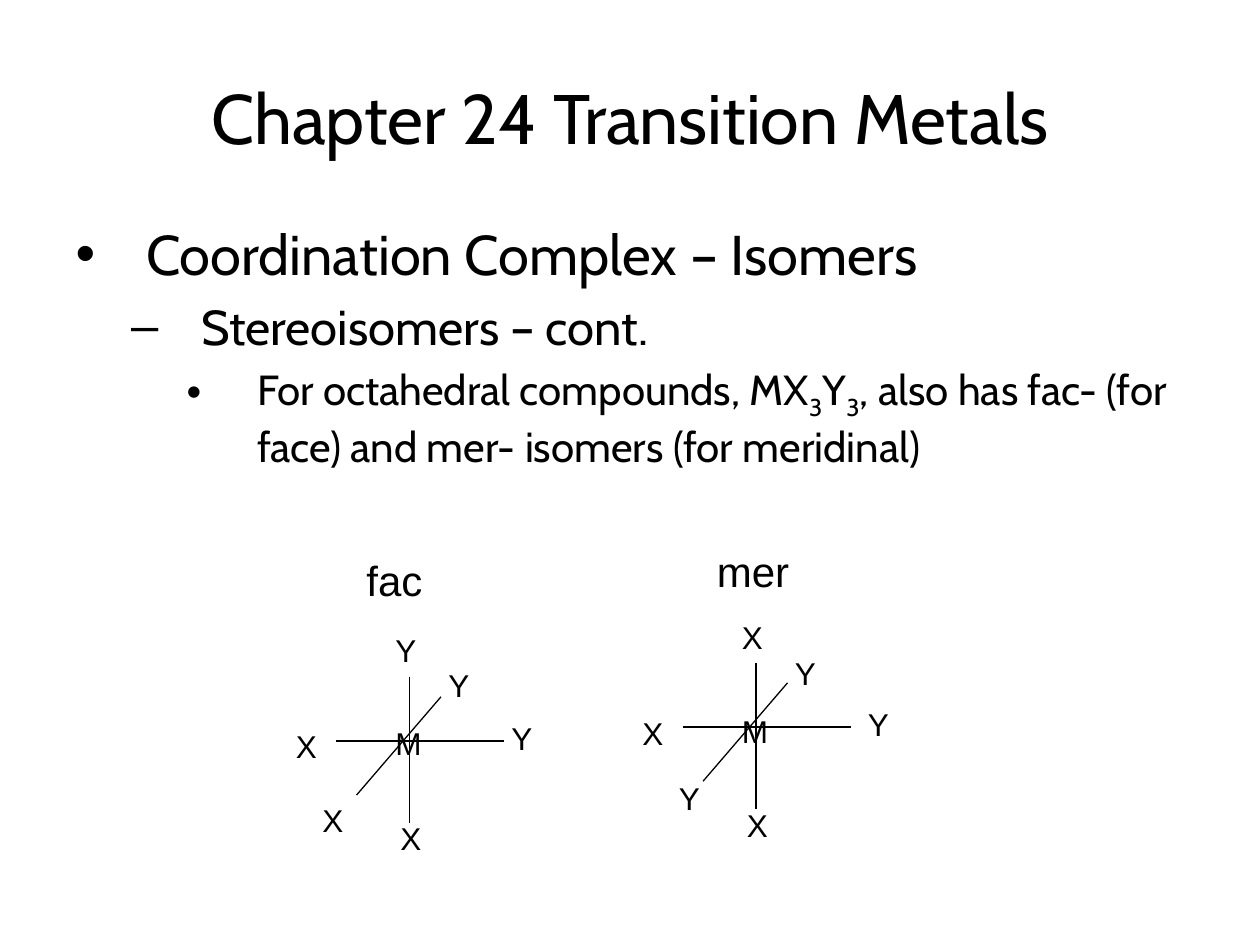
"""Builds a slide on the fac and mer isomers of octahedral complexes."""
from pptx import Presentation
from pptx.dml.color import RGBColor
from pptx.enum.shapes import MSO_CONNECTOR
from pptx.enum.text import MSO_ANCHOR, MSO_AUTO_SIZE, PP_ALIGN
from pptx.oxml.ns import qn
from pptx.util import Pt
from lxml.etree import SubElement

PX = 9144
BLACK = RGBColor(0, 0, 0)


def add_label(s, text, x, y, w, h, size):
    tf = s.shapes.add_textbox(x * PX, y * PX, w * PX, h * PX).text_frame
    tf.word_wrap = True
    tf.auto_size = MSO_AUTO_SIZE.SHAPE_TO_FIT_TEXT
    p = tf.paragraphs[0]
    p.text = text
    set_font(p, "Arial", size)


def set_font(p, name, size):
    p.font.name = name
    p.font.size = Pt(size)
    p.font.color.rgb = BLACK


prs = Presentation()
prs.slide_width, prs.slide_height = 1000 * PX, 750 * PX
s = prs.slides.add_slide(prs.slide_layouts[1])

title, body = s.placeholders
for sp, top, height in ((title, 30, 125), (body, 169, 314)):
    sp.left, sp.top, sp.width, sp.height = 50 * PX, top * PX, 900 * PX, height * PX
    sp.text_frame.auto_size = MSO_AUTO_SIZE.NONE

tf = title.text_frame
tf.vertical_anchor = MSO_ANCHOR.MIDDLE
p = tf.paragraphs[0]
p.text = "Chapter 24 Transition Metals"
p.alignment = PP_ALIGN.CENTER
set_font(p, "Cabin", 40)

bullets = [
    (["Coordination Complex – Isomers"], 32),
    (["Stereoisomers – cont."], 28),
    (["For octahedral compounds, MX", "3", "Y", "3",
      ", also has fac- (for face) and mer- isomers (for meridinal)"], 24),
]
tf = body.text_frame
for level, (parts, size) in enumerate(bullets):
    p = tf.add_paragraph() if level else tf.paragraphs[0]
    p.level = level
    pPr = p._p.get_or_add_pPr()
    pPr.set("marL", str((56 + 44 * level) * PX))
    pPr.set("indent", str(-56 * PX))
    set_font(p, "Cabin", size)
    for part in parts:
        r = p.add_run()
        r.text = part
        if part == "3":
            r.font._element.set("baseline", "-25000")
tf.paragraphs[0].space_before = Pt(0)

bonds = [(0, -51, 0, 65), (75, 0, -58, 0), (25, -35, -42, 43)]
isomers = [
    ("fac", 281, 435, 325, 588, [
        ("M", 304, 570, 58), ("Y", 304, 496, 50), ("X", 225, 572, 42),
        ("X", 246, 631, 42), ("X", 308, 645, 50), ("Y", 346, 524, 50),
        ("Y", 396, 566, 50)]),
    ("mer", 559, 428, 600, 577, [
        ("M", 579, 560, 58), ("X", 579, 486, 50), ("X", 500, 562, 42),
        ("Y", 679, 555, 42), ("X", 583, 635, 50), ("Y", 621, 514, 50),
        ("Y", 529, 613, 50)]),
]
for name, name_x, name_y, cx, cy, atoms in isomers:
    for x1, y1, x2, y2 in bonds:
        bond = s.shapes.add_connector(
            MSO_CONNECTOR.STRAIGHT, (cx + x1) * PX, (cy + y1) * PX,
            (cx + x2) * PX, (cy + y2) * PX)
        bond.line.color.rgb = BLACK
        bond.line.width = Pt(0.75)
        SubElement(bond._element.spPr, qn("a:effectLst"))
    for atom, x, y, width in atoms:
        add_label(s, atom, x, y, width, 40, 18)
    add_label(s, name, name_x, name_y, 81, 51, 24)

prs.save("out.pptx")
